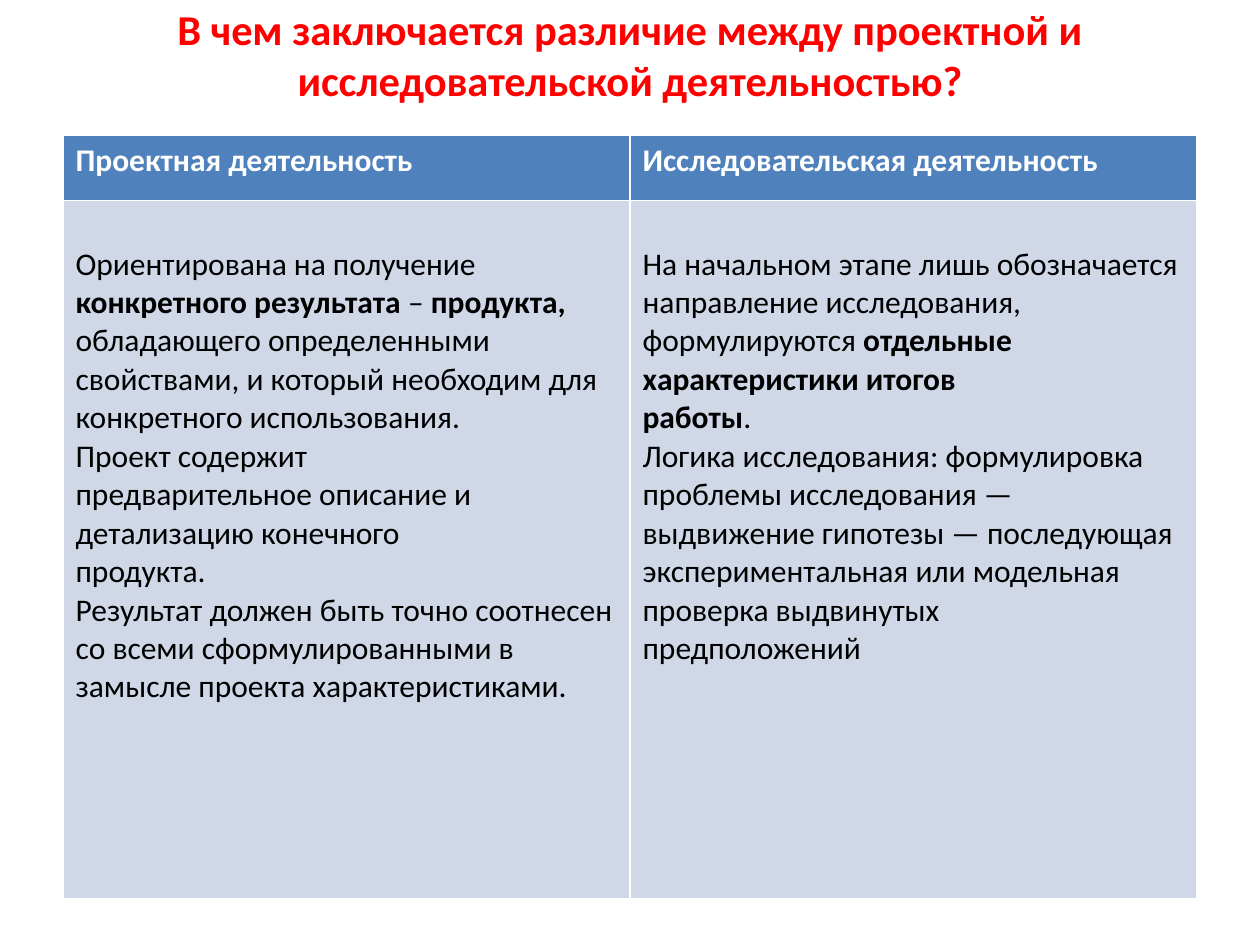
"""Build a slide that compares project work and research work in a table."""
from pptx import Presentation
from pptx import util as u
from pptx.dml.color import RGBColor
from pptx.enum import text

HUES = {"title": "FF0000", "head": "4F81BD", "body": "D0D8E8", "white": "FFFFFF", "ink": "000000"}


def write(para, words, size=18, hue="ink", bold=False):
    run = para.add_run()
    run.text = words
    run.font.name = "Calibri"
    run.font.size = u.Pt(size)
    run.font.bold = bold
    run.font.color.rgb = RGBColor.from_string(HUES[hue])


COLS = [
    ("Проектная деятельность", [
        [("Ориентирована на получение ", False), ("конкретного результата ", True),
         ("– ", False), ("продукта, ", True),
         ("обладающего определенными свойствами, и который необходим для "
          "конкретного использования.", False)],
        [("Проект содержит", False)],
        [("предварительное описание и", False)],
        [("детализацию конечного", False)],
        [("продукта.", False)],
        [("Результат должен быть точно соотнесен со всеми сформулированными "
          "в замысле проекта характеристиками.", False)],
    ]),
    ("Исследовательская деятельность", [
        [("На начальном этапе лишь обозначается направление исследования,", False)],
        [("формулируются ", False), ("отдельные характеристики итогов", True)],
        [("работы", True), (".", False)],
        [("Логика исследования: формулировка проблемы исследования — "
          "выдвижение гипотезы — последующая", False)],
        [("экспериментальная или модельная проверка выдвинутых", False)],
        [("предположений", False)],
    ]),
]

deck = Presentation()
deck.slide_width, deck.slide_height = u.Cm(25.4), u.Cm(19.05)
slide = deck.slides.add_slide(deck.slide_layouts[5])

title = slide.shapes.title
title.left, title.top, title.width, title.height = u.Cm(1.27), u.Cm(0), u.Cm(22.86), u.Cm(2.16)
frame = title.text_frame
frame.word_wrap = True
frame.auto_size = text.MSO_AUTO_SIZE.NONE
frame.vertical_anchor = text.MSO_ANCHOR.MIDDLE
frame.paragraphs[0].alignment = text.PP_ALIGN.CENTER
write(frame.paragraphs[0], "В чем заключается различие между проектной и исследовательской деятельностью?",
      size=24.3, hue="title", bold=True)

grid = slide.shapes.add_table(2, 2, u.Cm(1.27), u.Cm(2.72), u.Cm(22.86), u.Cm(15.39)).table
for row, high in zip(grid.rows, (1.32, 14.07)):
    row.height = u.Cm(high)

for col, (head, paras) in enumerate(COLS):
    top, body = grid.cell(0, col), grid.cell(1, col)
    for cell, hue in ((top, "head"), (body, "body")):
        cell.fill.solid()
        cell.fill.fore_color.rgb = RGBColor.from_string(HUES[hue])
    write(top.text_frame.paragraphs[0], head, hue="white", bold=True)
    body.margin_top = u.Cm(0.9)
    for num, runs in enumerate(paras):
        para = body.text_frame.add_paragraph() if num else body.text_frame.paragraphs[0]
        for words, bold in runs:
            write(para, words, bold=bold)

deck.save("out.pptx")
